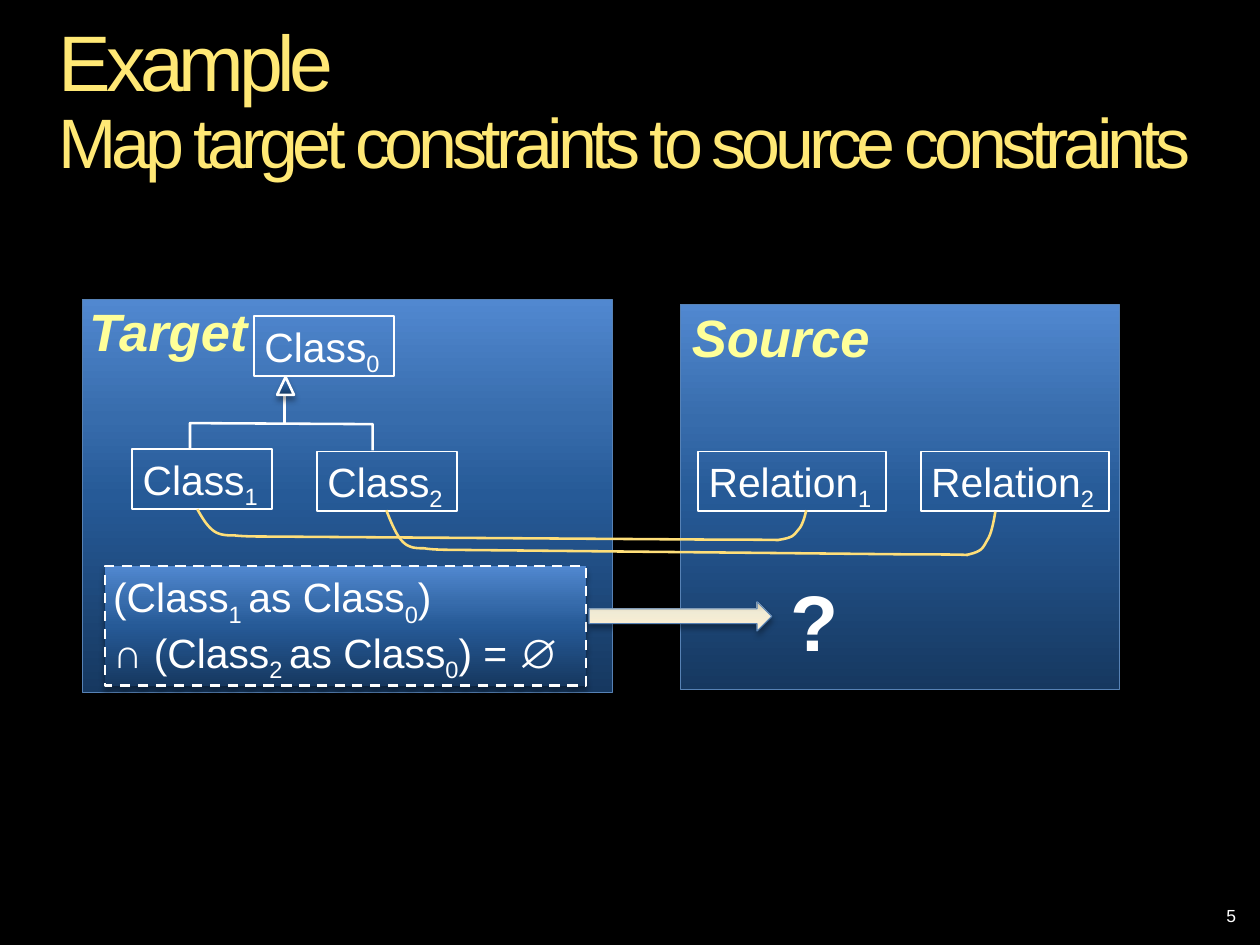
"""Build the slide that maps target constraints to source constraints."""
from lxml.etree import SubElement
from pptx import Presentation
from pptx.dml.color import RGBColor
from pptx.enum.dml import MSO_LINE
from pptx.enum.shapes import MSO_CONNECTOR, MSO_SHAPE
from pptx.enum.text import MSO_ANCHOR, MSO_AUTO_SIZE, PP_ALIGN
from pptx.oxml import parse_xml
from pptx.oxml.ns import nsdecls, qn
from pptx.util import Inches, Pt

WHITE, YELLOW, EDGE = "FFFFFF", "FFFF99", "5782B5"
BLUE = [(0, "163860"), (50, "265A97"), (70, "376CAC"), (100, "5188D0")]
CREAM = [(0, "FFEFD1"), (65, "F0EBD5"), (100, "D1C39F")]


def add_panel(s, kind, box, stops, color, width):
    """Add a shape with a vertical gradient and a soft shadow."""
    sp = s.shapes.add_shape(kind, *map(Inches, box))
    sp.shadow.inherit = False
    spPr = sp._element.spPr
    gs = "".join(f'<a:gs pos="{pos * 1000}"><a:srgbClr val="{c}"/></a:gs>' for pos, c in stops)
    spPr.insert(2, parse_xml(
        f'<a:gradFill {nsdecls("a")} rotWithShape="1"><a:gsLst>{gs}</a:gsLst>'
        '<a:lin ang="16200000" scaled="0"/></a:gradFill>'))
    spPr.find(qn("a:effectLst")).append(parse_xml(
        f'<a:outerShdw {nsdecls("a")} blurRad="50800" dist="38100" dir="5400000" rotWithShape="0">'
        '<a:srgbClr val="000000"><a:alpha val="35000"/></a:srgbClr></a:outerShdw>'))
    sp.line.color.rgb = RGBColor.from_string(color)
    sp.line.width = Pt(width)
    return sp


def add_text(tf, lines, size, color=WHITE, bold=False, italic=False):
    """Write lines of runs; every second run in a line is a subscript."""
    tf.word_wrap = False
    tf.auto_size = MSO_AUTO_SIZE.SHAPE_TO_FIT_TEXT
    tf.vertical_anchor = MSO_ANCHOR.TOP
    p = tf.paragraphs[0]
    p.alignment = PP_ALIGN.LEFT
    for n, line in enumerate(lines):
        if n:
            p.add_line_break()
        for i, text in enumerate(line):
            r = p.add_run()
            r.text = text
            r.font.name = "Arial"
            r.font.size = Pt(size)
            r.font.bold, r.font.italic = bold, italic
            r.font.color.rgb = RGBColor.from_string(color)
            if i % 2:
                r.font._element.set("baseline", "-25000")
    return p


prs = Presentation()
prs.slide_width, prs.slide_height = Inches(12), Inches(9)
s = prs.slides.add_slide(prs.slide_layouts[5])
s.background.fill.solid()
s.background.fill.fore_color.rgb = RGBColor.from_string("000000")

for box in [(6.48, 2.9, 4.18, 3.67), (0.79, 2.85, 5.04, 3.75)]:
    add_panel(s, MSO_SHAPE.RECTANGLE, box, BLUE, EDGE, 0.75)

title = s.shapes.title
title.left, title.top, title.width, title.height = map(Inches, (0.56, 0.22, 11, 1.54))
tf = title.text_frame
tf.margin_left = tf.margin_top = tf.margin_right = tf.margin_bottom = 0
p = add_text(tf, [["Example"], ["Map target constraints to source constraints"]], 48, "FFE875")
tf.word_wrap = True
p.line_spacing = 0.9
p.runs[0].font.size = Pt(54)
for r in p.runs:
    r.font._element.set("spc", "-360")

for name, index, x, y, w in [
    ("Class", "0", 2.42, 3.01, 1.33),
    ("Class", "1", 1.26, 4.28, 1.33),
    ("Class", "2", 3.02, 4.3, 1.33),
    ("Relation", "1", 6.65, 4.3, 1.79),
    ("Relation", "2", 8.77, 4.3, 1.79),
]:
    sp = s.shapes.add_shape(MSO_SHAPE.RECTANGLE, *map(Inches, (x, y, w, 0.57)))
    sp.shadow.inherit = False
    sp.fill.background()
    sp.line.color.rgb = RGBColor.from_string(WHITE)
    sp.line.width = Pt(1.25)
    add_text(sp.text_frame, [[name, index]], 28)

curve = [
    [(0.05, 0.09), (0.1, 0.17), (0.16, 0.21)],
    [(0.22, 0.25), (0.29, 0.25), (0.36, 0.25)],
    [(0.43, 0.26), (0.6, 0.26), (0.6, 0.26)],
    [(0.6, 0.26), (4.98, 0.29), (4.98, 0.29)],
    [(5.81, 0.29), (5.43, 0.3), (5.55, 0.29)],
    [(5.67, 0.27), (5.68, 0.25), (5.72, 0.2)],
    [(5.76, 0.16), (5.78, 0.09), (5.8, 0.01)],
]
link = [(0, 0)]
for b, c, d in curve:
    a = link[-1]
    for t in [k / 8 for k in range(1, 9)]:
        link.append(tuple(
            (1 - t) ** 3 * a[i] + 3 * (1 - t) ** 2 * t * b[i] + 3 * (1 - t) * t ** 2 * c[i] + t ** 3 * d[i]
            for i in (0, 1)))

fork = [(0, 0.24), (0, 0), (1.74, 0.01), (1.74, 0.26)]
for points, x, y, stretch, color in [
    (link, 1.88, 4.85, 1, "FFDF79"),
    (link, 3.68, 4.86, 1.45, "FFDF79"),
    (fork, 1.81, 4.03, 1, WHITE),
]:
    pts = [(Inches(x + dx), Inches(y + dy * stretch)) for dx, dy in points]
    fb = s.shapes.build_freeform(*pts[0])
    fb.add_line_segments(pts[1:], close=False)
    sp = fb.convert_to_shape()
    sp.shadow.inherit = False
    sp.fill.background()
    sp.line.color.rgb = RGBColor.from_string(color)
    sp.line.width = Pt(1.75)

stem = s.shapes.add_connector(MSO_CONNECTOR.STRAIGHT, *map(Inches, (2.71, 4.03, 2.71, 3.75)))
stem.line.color.rgb = RGBColor.from_string(WHITE)
stem.line.width = Pt(1.75)
SubElement(stem._element.spPr, qn("a:effectLst"))

add_panel(s, MSO_SHAPE.ISOSCELES_TRIANGLE, (2.64, 3.59, 0.16, 0.17), BLUE, WHITE, 1.75)
constraint = add_panel(s, MSO_SHAPE.RECTANGLE, (1, 5.39, 4.58, 1.14), BLUE, WHITE, 1.75)
constraint.line.dash_style = MSO_LINE.DASH
add_panel(s, MSO_SHAPE.RIGHT_ARROW, (5.61, 5.73, 1.74, 0.28), CREAM, EDGE, 0.75)

formula = [
    ["(Class", "1 ", "as Class", "0", ")"],
    ["∩ (Class", "2 ", "as Class", "0", ") = ∅"],
]
for box, lines, size, color, bold, italic in [
    ((0.75, 2.8, 1.73, 0.71), [["Target"]], 36, YELLOW, True, True),
    ((6.49, 2.86, 1.91, 0.71), [["Source"]], 36, YELLOW, True, True),
    ((0.98, 5.4, 4.5, 1.04), formula, 28, WHITE, False, False),
    ((7.43, 5.41, 0.66, 1.01), [["?"]], 54, WHITE, True, False),
]:
    tb = s.shapes.add_textbox(*map(Inches, box))
    add_text(tb.text_frame, lines, size, color, bold, italic)

number = s.shapes.add_textbox(*map(Inches, (9.07, 8.52, 2.8, 0.39)))
p = add_text(number.text_frame, [["5"]], 12)
p.alignment = PP_ALIGN.RIGHT
number.text_frame.word_wrap = True
number.text_frame.auto_size = MSO_AUTO_SIZE.NONE
number.text_frame.vertical_anchor = MSO_ANCHOR.MIDDLE

prs.save("out.pptx")
